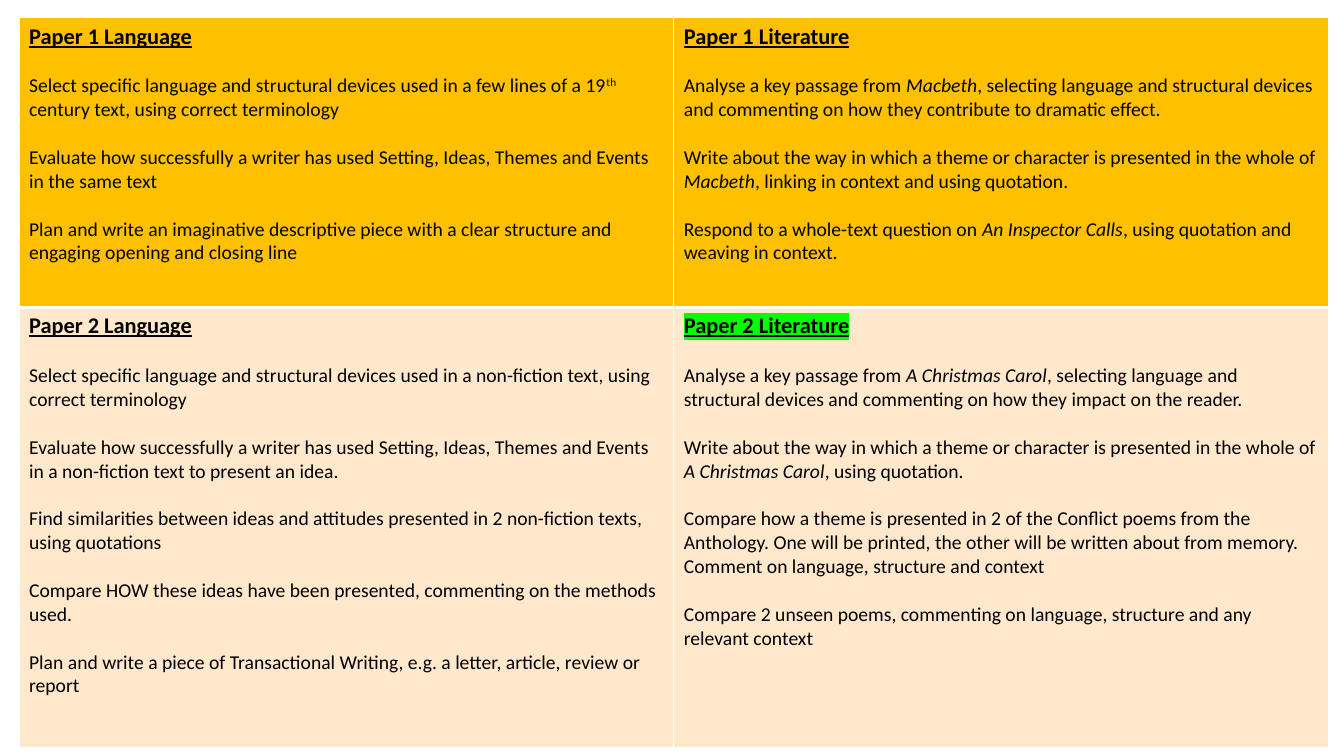
from dataclasses import dataclass

import pptx
import pptx.dml.color
import pptx.oxml
import pptx.oxml.ns
import pptx.util
from pptx.util import Cm, Pt


@dataclass(frozen=True)
class Theme:
    font: str = "Calibri"
    text: str = "000000"
    language: str = "FFC000"
    second_paper: str = "FFE8CC"
    border: str = "FFFFFF"
    highlight: str = "00FF00"
    heading_size: int = 16
    body_size: int = 14
    gap: float = 17.1


THEME = Theme()
NAMESPACE = pptx.oxml.ns.nsdecls("a")

# In body text, *...* is italic and ^...^ is superscript.
PAPERS = [
    [
        ("Paper 1 Language", [
            "Select specific language and structural devices used in a few lines of a 19^th^ century text, using correct terminology",
            "Evaluate how successfully a writer has used Setting, Ideas, Themes and Events in the same text",
            "Plan and write an imaginative descriptive piece with a clear structure and engaging opening and closing line",
        ]),
        ("Paper 1 Literature", [
            "Analyse a key passage from *Macbeth*, selecting language and structural devices and commenting on how they contribute to dramatic effect.",
            "Write about the way in which a theme or character is presented in the whole of *Macbeth*, linking in context and using quotation.",
            "Respond to a whole-text question on *An Inspector Calls*, using quotation and weaving in context.",
        ]),
    ],
    [
        ("Paper 2 Language", [
            "Select specific language and structural devices used in a non-fiction text, using correct terminology",
            "Evaluate how successfully a writer has used Setting, Ideas, Themes and Events in a non-fiction text to present an idea.",
            "Find similarities between ideas and attitudes presented in 2 non-fiction texts, using quotations",
            "Compare HOW these ideas have been presented, commenting on the methods used.",
            "Plan and write a piece of Transactional Writing, e.g. a letter, article, review or report",
        ]),
        ("Paper 2 Literature", [
            "Analyse a key passage from *A Christmas Carol*, selecting language and structural devices and commenting on how they impact on the reader.",
            "Write about the way in which a theme or character is presented in the whole of* A Christmas Carol*, using quotation.",
            "Compare how a theme is presented in 2 of the Conflict poems from the Anthology. One will be printed, the other will be written about from memory. Comment on language, structure and context",
            "Compare 2 unseen poems, commenting on language, structure and any relevant context",
        ]),
    ],
]
HIGHLIGHTED = "Paper 2 Literature"


def write(paragraph, text, size=THEME.body_size, heading=False, highlight=None, gap=0):
    """Fill a paragraph, turning *...* into italics and ^...^ into superscript."""
    paragraph.space_before = Pt(gap)
    for i, italic_part in enumerate(text.split("*")):
        for j, part in enumerate(italic_part.split("^")):
            if not part:
                continue
            run = paragraph.add_run()
            run.text = part
            font = run.font
            font.name, font.size = THEME.font, Pt(size)
            font.bold = font.underline = heading
            font.italic = i % 2 == 1
            font.color.rgb = pptx.dml.color.RGBColor.from_string(THEME.text)
            properties = run._r.get_or_add_rPr()
            if j % 2:
                properties.set("baseline", "30000")
            if highlight:
                properties.find(pptx.oxml.ns.qn("a:solidFill")).addnext(pptx.oxml.parse_xml(
                    f'<a:highlight {NAMESPACE}><a:srgbClr val="{highlight}"/></a:highlight>'))


def set_borders(cell, **widths):
    for index, (side, width) in enumerate(widths.items()):
        cell._tc.get_or_add_tcPr().insert(index, pptx.oxml.parse_xml(
            f'<a:ln{side} {NAMESPACE} w="{Pt(width)}"><a:solidFill>'
            f'<a:srgbClr val="{THEME.border}"/></a:solidFill></a:ln{side}>'))


deck = pptx.Presentation()
deck.slide_width, deck.slide_height = Cm(33.87), Cm(19.05)
slide = deck.slides.add_slide(deck.slide_layouts[6])

exam_table = slide.shapes.add_table(2, 2, Cm(0.48), Cm(0.45), Cm(33), Cm(18.4)).table
for column in exam_table.columns:
    column.width = Cm(16.5)
for row, height in zip(exam_table.rows, (7.3, 11.1)):
    row.height = Cm(height)

row_fills = (THEME.language, THEME.second_paper)
for row_index, (papers, fill) in enumerate(zip(PAPERS, row_fills)):
    for column_index, (heading, tasks) in enumerate(papers):
        cell = exam_table.cell(row_index, column_index)
        cell.fill.solid()
        cell.fill.fore_color.rgb = pptx.dml.color.RGBColor.from_string(fill)
        first_row = row_index == 0
        set_borders(cell, L=1, R=1, T=1 if first_row else 3, B=3 if first_row else 1)

        write(cell.text_frame.paragraphs[0], heading, size=THEME.heading_size, heading=True,
              highlight=THEME.highlight if heading == HIGHLIGHTED else None)
        for task in tasks:
            write(cell.text_frame.add_paragraph(), task, gap=THEME.gap)

deck.save("out.pptx")
